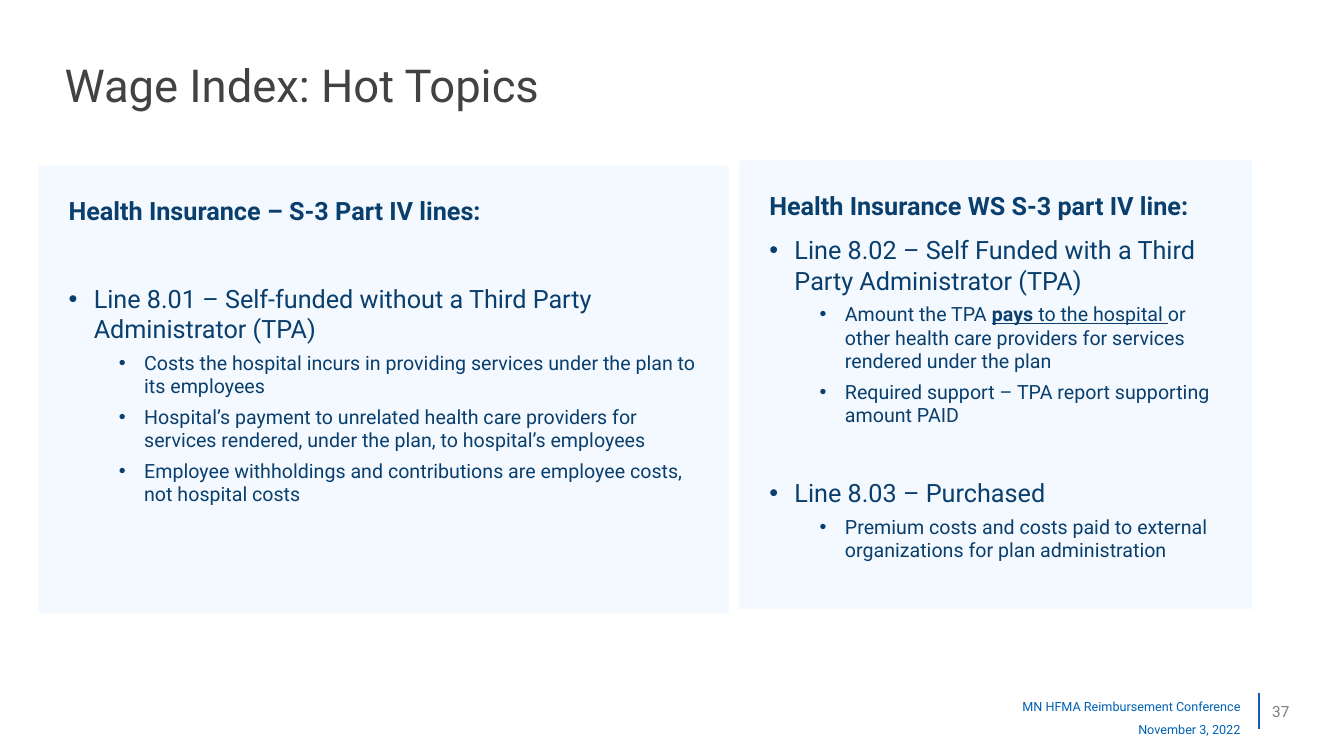
import pptx
import pptx.dml.color
import pptx.enum.shapes
import pptx.enum.text
import pptx.oxml.ns
import pptx.util
from lxml import etree
from pptx.util import Inches

FONT = "Roboto"
COLORS = {
    "title": "424242",
    "panel": "F3F9FF",
    "text": "093E6D",
    "footer": "0061B4",
    "rule": "125FB1",
    "number": "808080",
}
STYLES = {
    "heading": {"size": 18, "level": 0, "margin": 0, "before": 10, "bold": True},
    "line": {"size": 18, "level": 0, "margin": 0.25, "before": 10, "bold": False},
    "detail": {"size": 14, "level": 1, "margin": 0.75, "before": 5, "bold": False},
}
HANGING = 0.25

LEFT_PANEL = [
    ("heading", ["Health Insurance – S-3 Part IV lines:"]),
    ("line", ["Line 8.01 – Self-funded without a Third Party Administrator (TPA)"], 41),
    ("detail", ["Costs the hospital incurs in providing services under the plan to its employees"]),
    ("detail", ["Hospital’s payment to unrelated health care providers for services rendered, "
                "under the plan, to hospital’s employees"]),
    ("detail", ["Employee withholdings and contributions are employee costs, not hospital costs"]),
]
RIGHT_PANEL = [
    ("heading", ["Health Insurance WS S-3 part IV line:"]),
    ("line", ["Line 8.02 – Self Funded with a Third Party Administrator (TPA)"]),
    ("detail", ["Amount the TPA ",
                ("pays ", {"bold": True, "underline": True}),
                ("to the hospital ", {"underline": True}),
                "or other health care providers for services rendered under the plan"]),
    ("detail", ["Required support – TPA report supporting amount PAID"]),
    ("line", ["Line 8.03 – Purchased"], 36),
    ("detail", ["Premium costs and costs paid to external organizations for plan administration"]),
]


def color(name):
    """Return the named colour."""
    return pptx.dml.color.RGBColor.from_string(COLORS[name])


def place(shape, box):
    """Move a shape to a box of left, top, width and height in inches."""
    shape.left, shape.top, shape.width, shape.height = map(Inches, box)


def set_frame(frame, insets, anchor=pptx.enum.text.MSO_ANCHOR.TOP):
    """Set wrapping, insets and anchor of a text frame."""
    frame.word_wrap = True
    frame.auto_size = pptx.enum.text.MSO_AUTO_SIZE.NONE
    frame.vertical_anchor = anchor
    (frame.margin_left, frame.margin_top,
     frame.margin_right, frame.margin_bottom) = map(Inches, insets)


def add_run(paragraph, text, size, color_name, bold=False, underline=False):
    """Add one formatted run."""
    run = paragraph.add_run()
    run.text = text
    run.font.name = FONT
    run.font.size = pptx.util.Pt(size)
    run.font.bold = bold
    run.font.underline = underline
    run.font.color.rgb = color(color_name)


def set_bullet(paragraph, margin):
    """Give a paragraph a hanging bullet, or none when the margin is zero."""
    properties = paragraph._p.get_or_add_pPr()
    properties.set("marL", str(Inches(margin)))
    properties.set("indent", str(-Inches(HANGING) if margin else 0))
    if margin:
        font = etree.SubElement(properties, pptx.oxml.ns.qn("a:buFont"))
        font.set("typeface", "Arial")
        bullet = etree.SubElement(properties, pptx.oxml.ns.qn("a:buChar"))
        bullet.set("char", "•")
    else:
        etree.SubElement(properties, pptx.oxml.ns.qn("a:buNone"))


def add_title(shape, box, text):
    """Fill the title placeholder."""
    place(shape, box)
    frame = shape.text_frame
    set_frame(frame, (0.1, 0.05, 0.1, 0.05), pptx.enum.text.MSO_ANCHOR.MIDDLE)
    paragraph = frame.paragraphs[0]
    paragraph.alignment = pptx.enum.text.PP_ALIGN.LEFT
    paragraph.line_spacing = pptx.util.Pt(39)
    add_run(paragraph, text, 32.4, "title")


def add_panel(shape, box, entries):
    """Fill a body placeholder as a tinted panel with a bulleted list."""
    place(shape, box)
    shape.fill.solid()
    shape.fill.fore_color.rgb = color("panel")
    frame = shape.text_frame
    set_frame(frame, (0.3, 0.3, 0.3, 0.2))
    for index, (kind, runs, *gap) in enumerate(entries):
        style = STYLES[kind]
        paragraph = frame.add_paragraph() if index else frame.paragraphs[0]
        set_bullet(paragraph, style["margin"])
        paragraph.level = style["level"]
        before = gap[0] if gap else style["before"]
        paragraph.space_before = pptx.util.Pt(before if index else 0)
        for run in runs:
            text, changes = (run, {}) if isinstance(run, str) else run
            add_run(paragraph, text, style["size"], "text",
                    **{"bold": style["bold"], **changes})


def add_right_text(slide, box, insets, lines, size, color_name, spacing):
    """Add a right-aligned text box."""
    frame = slide.shapes.add_textbox(*map(Inches, box)).text_frame
    set_frame(frame, insets)
    for index, line in enumerate(lines):
        paragraph = frame.add_paragraph() if index else frame.paragraphs[0]
        paragraph.alignment = pptx.enum.text.PP_ALIGN.RIGHT
        paragraph.line_spacing = spacing
        add_run(paragraph, line, size, color_name)


def add_footer(slide, box):
    """Add the event lines, the upright rule and the page number."""
    left, top, width, height = box
    add_right_text(slide, (left, top, 4.26, height), (0.1, 0.05, 0.1, 0.05),
                   ["MN HFMA Reimbursement Conference", "November 3, 2022"],
                   9, "footer", 1.5)
    rule_left = left + 4.35
    rule = slide.shapes.add_connector(
        pptx.enum.shapes.MSO_CONNECTOR.STRAIGHT,
        Inches(rule_left), Inches(top + 0.07), Inches(rule_left), Inches(top + 0.42))
    rule.line.color.rgb = color("rule")
    rule.line.width = pptx.util.Pt(1.25)
    etree.SubElement(rule._element.spPr, pptx.oxml.ns.qn("a:effectLst"))
    add_right_text(slide, (left + width - 0.37, top + 0.11, 0.37, 0.27),
                   (0.1, 0.05, 0, 0.05), ["37"], 11, "number", 1)


def main():
    """Build and save the slide."""
    presentation = pptx.Presentation()
    presentation.slide_width = Inches(13.33)
    presentation.slide_height = Inches(7.5)
    slide = presentation.slides.add_slide(presentation.slide_layouts[3])
    title, left_body, right_body = slide.placeholders
    add_title(title, (0.54, 0.57, 12.26, 0.53), "Wage Index: Hot Topics")
    add_panel(left_body, (0.38, 1.64, 6.85, 4.44), LEFT_PANEL)
    add_panel(right_body, (7.33, 1.59, 5.09, 4.45), RIGHT_PANEL)
    add_footer(slide, (8.14, 6.81, 4.65, 0.54))
    presentation.save("out.pptx")


if __name__ == "__main__":
    main()
